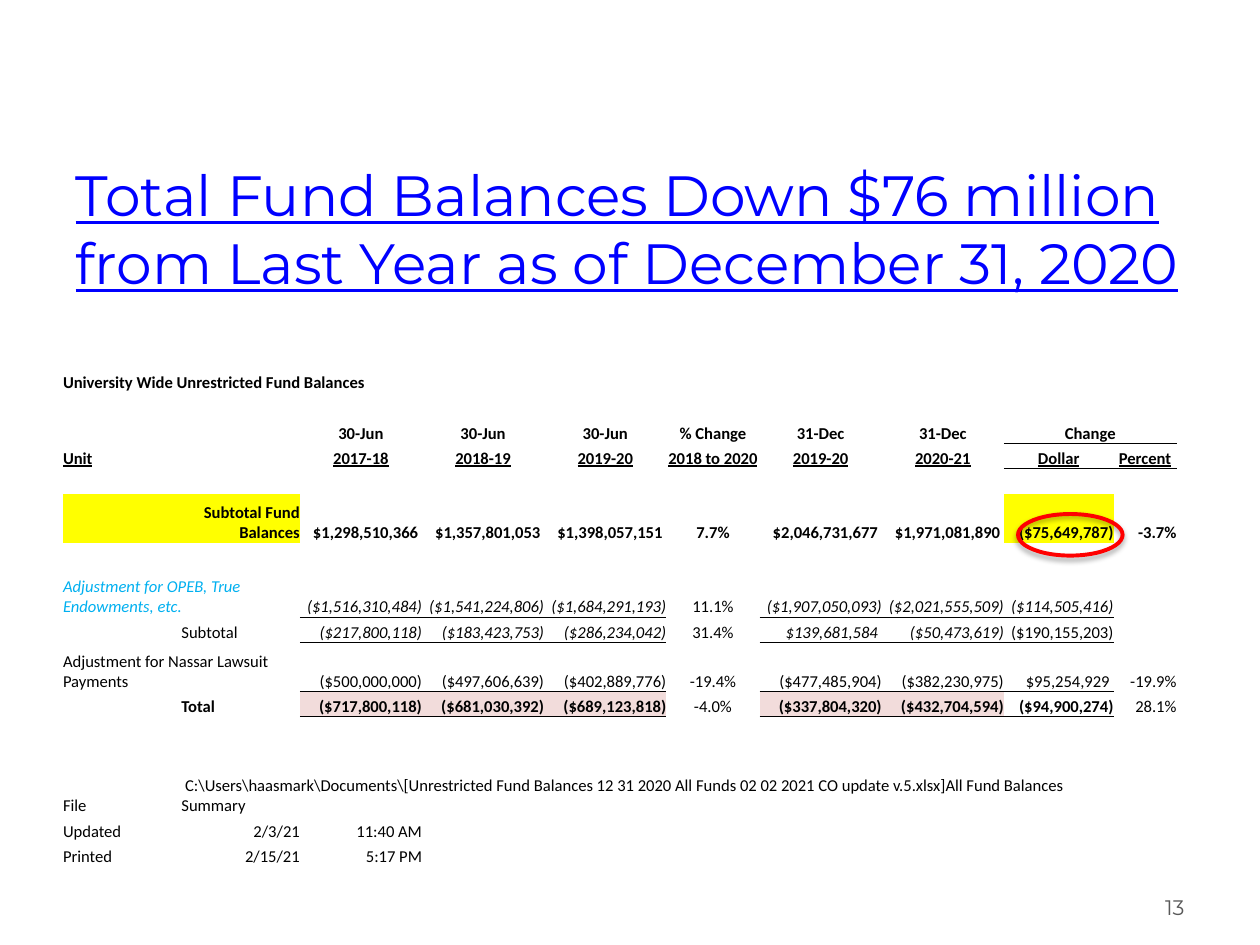
from lxml import etree
from pptx import Presentation
from pptx.dml.color import RGBColor
from pptx.enum.shapes import MSO_SHAPE
from pptx.enum.text import MSO_ANCHOR, MSO_AUTO_SIZE, PP_ALIGN
from pptx.oxml.ns import qn
from pptx.util import Inches, Pt

LEFT, CENTER, RIGHT = PP_ALIGN.LEFT, PP_ALIGN.CENTER, PP_ALIGN.RIGHT
MIDDLE, BOTTOM = MSO_ANCHOR.MIDDLE, MSO_ANCHOR.BOTTOM
ELLIPSE = MSO_SHAPE.OVAL
TITLE_ONLY = 5
GRID_COLUMNS, GRID_ROWS = 100, 75
PLAIN_TABLE_STYLE = "{2D5ABB26-0587-4C30-8999-92F81FD0307C}"

COLUMN_WIDTHS = [9.4, 9.4, 9.7, 9.7, 9.7, 7.4, 9.7, 9.7, 8.7, 5]
TALL_ROWS = {0: 2.4, 5: 3.9, 7: 3.9, 9: 3.9, 13: 3.9}
ROWS = [
    ["University Wide Unrestricted Fund Balances"],
    [],
    ["", "", "30-Jun", "30-Jun", "30-Jun", "% Change", "31-Dec", "31-Dec", "Change"],
    ["Unit", "", "2017-18", "2018-19", "2019-20", "2018 to 2020", "2019-20", "2020-21",
     "Dollar", "Percent"],
    [],
    ["", "Subtotal Fund Balances", "$1,298,510,366 ", "$1,357,801,053 ", "$1,398,057,151 ",
     "7.7%", "$2,046,731,677 ", "$1,971,081,890 ", "($75,649,787)", "-3.7%"],
    [],
    ["Adjustment for OPEB, True Endowments, etc.", "", "($1,516,310,484)",
     "($1,541,224,806)", "($1,684,291,193)", "11.1%", "($1,907,050,093)",
     "($2,021,555,509)", "($114,505,416)"],
    ["", "Subtotal", "($217,800,118)", "($183,423,753)", "($286,234,042)", "31.4%",
     "$139,681,584 ", "($50,473,619)", "($190,155,203)"],
    ["Adjustment for Nassar Lawsuit Payments", "", "($500,000,000)", "($497,606,639)",
     "($402,889,776)", "-19.4%", "($477,485,904)", "($382,230,975)", "$95,254,929 ", "-19.9%"],
    ["", "Total", "($717,800,118)", "($681,030,392)", "($689,123,818)", "-4.0%",
     "($337,804,320)", "($432,704,594)", "($94,900,274)", "28.1%"],
    [],
    [],
    ["File", r" C:\Users\haasmark\Documents\[Unrestricted Fund Balances 12 31 2020 All Funds "
     r"02 02 2021 CO update v.5.xlsx]All Fund Balances Summary"],
    ["Updated", "2/3/21", "11:40 AM"],
    ["Printed", "2/15/21", "5:17 PM"],
]
SPANS = {(0, 0): 3, (2, 8): 2, (7, 0): 2, (9, 0): 2, (13, 1): 8}
AMOUNT_COLUMNS = {2, 3, 4, 6, 7, 8}
RULED_COLUMNS = {2: {8, 9}, 7: AMOUNT_COLUMNS, 9: AMOUNT_COLUMNS}
FILLS = {(5, column): "FFFF00" for column in (0, 1, 8)}
FILLS.update({(10, column): "F2DCDB" for column in AMOUNT_COLUMNS - {8}})


def color(value):
    """Return the colour for a hex string."""
    return RGBColor.from_string(value)


def alignment(row, column):
    """Return the alignment of a table cell."""
    if column < 2:
        return RIGHT if column == 1 and row in (5, 14, 15) else LEFT
    return CENTER if row < 4 or column == 5 else RIGHT


def is_bold(row, column):
    """Tell whether a table cell is bold."""
    return row <= 5 or (row == 10 and column not in (5, 9))


def is_italic(row, column):
    """Tell whether a table cell is italic."""
    return column != 5 and (row == 7 or (row == 8 and 2 <= column <= 7))


class SlideBuilder:
    """Hold the style and the current slide."""

    heading_font, table_font = "Montserrat", "Calibri"

    def __init__(self, presentation):
        """Add a title-only slide."""
        self.column = presentation.slide_width / GRID_COLUMNS
        self.row = presentation.slide_height / GRID_ROWS
        self.slide = presentation.slides.add_slide(presentation.slide_layouts[TITLE_ONLY])

    def box(self, left, top, width, height):
        """Turn grid units into slide lengths."""
        return (round(left * self.column), round(top * self.row),
                round(width * self.column), round(height * self.row))

    def set_text(self, frame, text, name, size, hue, align):
        """Set one formatted paragraph and return its font."""
        paragraph = frame.paragraphs[0]
        paragraph.text = text
        paragraph.alignment = align
        font = paragraph.font
        font.name, font.size = name, Pt(size)
        font.color.rgb = color(hue)
        return font

    def title(self, text, *place):
        """Move and format the title placeholder."""
        shape = self.slide.shapes.title
        shape.left, shape.top, shape.width, shape.height = self.box(*place)
        frame = shape.text_frame
        frame.auto_size, frame.vertical_anchor = MSO_AUTO_SIZE.NONE, MIDDLE
        self.set_text(frame, text, self.heading_font, 32.4, "0000FF", LEFT).underline = True

    def page_number(self, text, *place):
        """Add the page number."""
        frame = self.slide.shapes.add_textbox(*self.box(*place)).text_frame
        frame.word_wrap, frame.vertical_anchor = True, MIDDLE
        self.set_text(frame, text, self.heading_font, 12, "595959", RIGHT)

    def rule(self, cell, side):
        """Draw a thin black border on one side of a cell."""
        line = etree.Element(qn(f"a:ln{side}"), w=str(Pt(0.5)))
        fill = etree.SubElement(line, qn("a:solidFill"))
        etree.SubElement(fill, qn("a:srgbClr"), val="000000")
        cell._tc.get_or_add_tcPr().insert(0, line)

    def cell(self, cell, row, column, text):
        """Fill and format one table cell."""
        cell.margin_left = cell.margin_right = cell.margin_top = cell.margin_bottom = 0
        cell.vertical_anchor = BOTTOM
        hue = "00B0F0" if (row, column) == (7, 0) else "000000"
        font = self.set_text(cell.text_frame, text, self.table_font, 9.5, hue,
                             alignment(row, column))
        font.bold, font.italic = is_bold(row, column), is_italic(row, column)
        font.underline = row == 3
        if (row, column) in FILLS:
            cell.fill.solid()
            cell.fill.fore_color.rgb = color(FILLS[row, column])
        else:
            cell.fill.background()
        if column in RULED_COLUMNS.get(row, ()):
            self.rule(cell, "B")
        if column in RULED_COLUMNS.get(row - 1, ()):
            self.rule(cell, "T")

    def table(self, left, top):
        """Add the fund balance table."""
        heights = [TALL_ROWS.get(index, 2) for index in range(len(ROWS))]
        place = self.box(left, top, sum(COLUMN_WIDTHS), sum(heights))
        table = self.slide.shapes.add_table(len(ROWS), len(COLUMN_WIDTHS), *place).table
        table.first_row = table.horz_banding = False
        table._tbl.tblPr.find(qn("a:tableStyleId")).text = PLAIN_TABLE_STYLE
        for column, width in zip(table.columns, COLUMN_WIDTHS):
            column.width = round(width * self.column)
        for row, height in zip(table.rows, heights):
            row.height = round(height * self.row)
        for row, texts in enumerate(ROWS):
            for column in range(len(COLUMN_WIDTHS)):
                text = texts[column] if column < len(texts) else ""
                self.cell(table.cell(row, column), row, column, text)
        for (row, column), span in SPANS.items():
            table.cell(row, column).merge(table.cell(row, column + span - 1))

    def highlight(self, *place):
        """Add a red ring with a soft shadow."""
        shape = self.slide.shapes.add_shape(ELLIPSE, *self.box(*place))
        shape.fill.background()
        shape.line.color.rgb = color("FF0000")
        shape.line.width = Pt(2.25)
        shape.shadow.inherit = False
        effects = shape._element.spPr.find(qn("a:effectLst"))
        shadow = etree.SubElement(effects, qn("a:outerShdw"), blurRad=str(Pt(3.1)),
                                  dist=str(Pt(1.8)), dir="5400000", rotWithShape="0")
        black = etree.SubElement(shadow, qn("a:srgbClr"), val="000000")
        etree.SubElement(black, qn("a:alpha"), val="35000")


def main():
    """Build and save the presentation."""
    presentation = Presentation()
    presentation.slide_width, presentation.slide_height = Inches(10), Inches(7.5)
    builder = SlideBuilder(presentation)
    builder.title("Total Fund Balances Down $76 million from Last Year as of December 31, 2020",
                  5, 12.1, 90, 12)
    builder.page_number("13", 71.7, 70, 23.3, 4)
    builder.table(5, 28.8)
    builder.highlight(80.8, 40.8, 8.3, 3.3)
    presentation.save("out.pptx")


if __name__ == "__main__":
    main()
